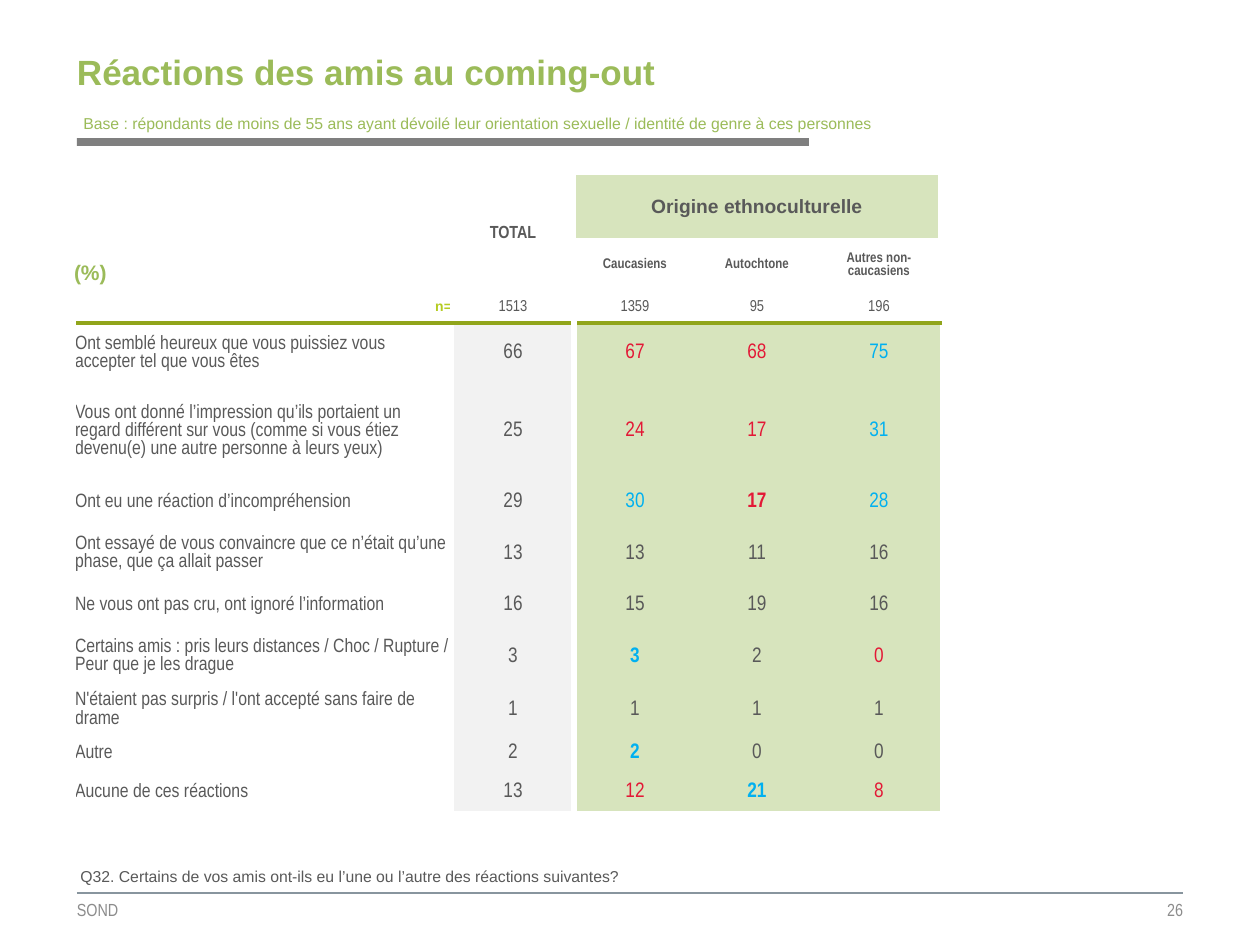
from lxml import etree
from pptx import Presentation
from pptx import util as u
from pptx.dml.color import RGBColor
from pptx.enum import shapes, text
from pptx.oxml.ns import qn

PX = u.Inches(1) / 126
GREEN, GREY, MUTED = "9BBB59", "595959", "8C8C8C"
RED, BLUE, LIME, OLIVE = "E31836", "00B0F0", "B5CC22", "91A51B"
PALE_GREEN, PALE_GREY, WHITE = "D7E4BD", "F2F2F2", "FFFFFF"
NARROW = "Arial Narrow"
LEFT, CENTER, RIGHT = text.PP_ALIGN.LEFT, text.PP_ALIGN.CENTER, text.PP_ALIGN.RIGHT
MIDDLE, BOTTOM = text.MSO_ANCHOR.MIDDLE, text.MSO_ANCHOR.BOTTOM

HEADER_HEIGHTS = [38, 22, 53, 32]
COLUMN_WIDTHS = [378, 122, 122, 122, 122]
ORIGINS = ["Caucasiens", "Autochtone", "Autres non-caucasiens"]
SAMPLE_SIZES = ["1513", "1359", "95", "196"]
# A leading r or b marks a red or blue score; a capital also makes it bold.
MARKS = {"r": (RED, False), "R": (RED, True), "b": (BLUE, False), "B": (BLUE, True)}
REACTIONS = [
    (59, "Ont semblé heureux que vous puissiez vous accepter tel que vous êtes",
     "66 r67 r68 b75"),
    (98, "Vous ont donné l’impression qu’ils portaient un regard différent sur vous "
         "(comme si vous étiez devenu(e) une autre personne à leurs yeux)",
     "25 r24 r17 b31"),
    (44, "Ont eu une réaction d’incompréhension", "29 b30 R17 b28"),
    (59, "Ont essayé de vous convaincre que ce n’était qu’une phase, que ça allait passer",
     "13 13 11 16"),
    (44, "Ne vous ont pas cru, ont ignoré l’information", "16 15 19 16"),
    (59, "Certains amis : pris leurs distances / Choc / Rupture / Peur que je les drague",
     "3 B3 2 r0"),
    (44, "N'étaient pas surpris / l'ont accepté sans faire de drame", "1 1 1 1"),
    (39, "Autre", "2 B2 0 0"),
    (39, "Aucune de ces réactions", "13 r12 B21 r8"),
]


def px(length):
    return u.Emu(round(length * PX))


def rgb(color):
    return RGBColor.from_string(color)


class SlideBuilder:
    """Holds the current slide and its text style."""

    def __init__(self, slide):
        self.slide = slide

    def add_text(self, frame, words, size, color, font="Arial", bold=False, align=LEFT):
        paragraph = frame.paragraphs[0]
        paragraph.alignment = align
        run = paragraph.add_run()
        run.text = words
        run.font.size, run.font.name, run.font.bold = u.Pt(size), font, bold
        run.font.color.rgb = rgb(color)
        return paragraph

    def inset(self, holder, left, top, right, bottom):
        holder.margin_left, holder.margin_top = px(left), px(top)
        holder.margin_right, holder.margin_bottom = px(right), px(bottom)

    def title(self, box, words):
        title = self.slide.shapes.title
        title.left, title.top, title.width, title.height = map(px, box)
        frame = title.text_frame
        frame.auto_size = text.MSO_AUTO_SIZE.NONE
        frame.vertical_anchor = MIDDLE
        self.inset(frame, 0, 0, 0, 34)
        self.add_text(frame, words, 20, GREEN, bold=True)

    def note(self, box, words, color, wrap=True):
        frame = self.slide.shapes.add_textbox(*map(px, box)).text_frame
        frame.word_wrap = wrap
        frame.auto_size = text.MSO_AUTO_SIZE.SHAPE_TO_FIT_TEXT
        self.add_text(frame, words, 9, color)

    def footer(self, box, words, align):
        frame = self.slide.shapes.add_textbox(*map(px, box)).text_frame
        frame.word_wrap = True
        frame.vertical_anchor = MIDDLE
        self.inset(frame, 0, 0, 0, 0)
        self.add_text(frame, words, 10, MUTED, NARROW, align=align)

    def bar(self, box, color):
        bar = self.slide.shapes.add_shape(shapes.MSO_SHAPE.RECTANGLE, *map(px, box))
        bar.shadow.inherit = False
        bar.fill.solid()
        bar.fill.fore_color.rgb = rgb(color)
        bar.line.fill.background()

    def rule(self, start, end, color, weight):
        rule = self.slide.shapes.add_connector(
            shapes.MSO_CONNECTOR.STRAIGHT, *map(px, start + end))
        rule.line.color.rgb = rgb(color)
        rule.line.width = u.Pt(weight)
        etree.SubElement(rule.element.spPr, qn("a:effectLst"))

    def table(self, left, top, widths, heights):
        table = self.slide.shapes.add_table(
            len(heights), len(widths), px(left), px(top),
            px(sum(widths)), px(sum(heights))).table
        table.first_row = table.horz_banding = False
        for column, width in zip(table.columns, widths):
            column.width = px(width)
        for row, height in zip(table.rows, heights):
            row.height = px(height)
        for cell in table.iter_cells():
            cell.fill.background()
            cell.vertical_anchor = MIDDLE
            self.inset(cell, 1, 1, 1, 0)
        return table

    def shade(self, cell, color):
        cell.fill.solid()
        cell.fill.fore_color.rgb = rgb(color)

    def borders(self, cell, edges):
        """Draws the edges given as side: (color, points) and clears the others."""
        properties = cell._tc.get_or_add_tcPr()
        for position, side in enumerate("LRTB"):
            line = etree.Element(qn(f"a:ln{side}"))
            properties.insert(position, line)
            if side in edges:
                color, weight = edges[side]
                line.set("w", str(u.Pt(weight)))
                fill = etree.SubElement(line, qn("a:solidFill"))
                etree.SubElement(fill, qn("a:srgbClr")).set("val", color)
            else:
                etree.SubElement(line, qn("a:noFill"))

    def cell(self, cell, words, size, color=GREY, font=NARROW, bold=False, align=CENTER):
        return self.add_text(cell.text_frame, words, size, color, font, bold, align)


def fill_header(page, table):
    table.cell(0, 1).merge(table.cell(2, 1))
    table.cell(0, 2).merge(table.cell(1, 4))
    table.cell(1, 0).merge(table.cell(2, 0))
    page.cell(table.cell(0, 1), "TOTAL", 10, bold=True)
    page.shade(table.cell(0, 2), PALE_GREEN)
    page.cell(table.cell(0, 2), "Origine ethnoculturelle", 11, font="Arial", bold=True)

    unit, sample = table.cell(1, 0), table.cell(3, 0)
    unit.vertical_anchor = BOTTOM
    for corner in (unit, sample):
        page.inset(corner, 0, 6, 0, 6)
    page.cell(unit, "(%)", 12, GREEN, "Arial", True, LEFT).line_spacing = 0.95
    page.cell(sample, "n=", 8, LIME, "Arial", True, RIGHT).line_spacing = 0.95

    for column, origin in enumerate(ORIGINS, 2):
        page.cell(table.cell(2, column), origin, 8, bold=True)
    for column, size in enumerate(SAMPLE_SIZES, 1):
        page.cell(table.cell(3, column), size, 9)


def fill_scores(page, table, first):
    for row, (_, reaction, scores) in enumerate(REACTIONS, first):
        page.cell(table.cell(row, 0), reaction, 11, align=LEFT)
        for column, score in enumerate(scores.split(), 1):
            color, bold = MARKS.get(score[0], (GREY, False))
            cell = table.cell(row, column)
            page.shade(cell, PALE_GREY if column == 1 else PALE_GREEN)
            page.cell(cell, score.lstrip("rRbB"), 12, color, bold=bold)


def draw_borders(page, table, first):
    for row in range(len(table.rows)):
        for column in range(len(table.columns)):
            in_header = row < first
            gap = (WHITE, 3 if in_header else 4.5)
            edges = {}
            if in_header or column < 2:
                edges = {"L": (WHITE, 3), "R": (WHITE, 3)}
            if column == 1:
                edges["R"] = gap
            if column == 2:
                edges["L"] = gap
            if in_header and column == 0:
                del edges["L"]
            if row == first - 1:
                edges["B"] = (OLIVE, 3)
            if row == first:
                edges["T"] = (OLIVE, 3)
            page.borders(table.cell(row, column), edges)


def main():
    deck = Presentation()
    deck.slide_width, deck.slide_height = px(1260), px(945)
    page = SlideBuilder(deck.slides.add_slide(deck.slide_layouts[5]))

    page.rule((77, 893), (1183, 893), "88959E", 1.5)
    page.bar((77, 138, 732, 8), "7F7F7F")
    page.footer((77, 893, 353, 33), "SOND", LEFT)
    page.footer((825, 893, 358, 33), "26", RIGHT)

    first = len(HEADER_HEIGHTS)
    heights = HEADER_HEIGHTS + [height for height, _, _ in REACTIONS]
    table = page.table(74, 175, COLUMN_WIDTHS, heights)
    fill_header(page, table)
    fill_scores(page, table, first)
    draw_borders(page, table, first)

    page.title((77, 45, 781, 87), "Réactions des amis au coming-out")
    page.note((71, 108, 822, 32), "Base : répondants de moins de 55 ans ayant dévoilé leur "
              "orientation sexuelle / identité de genre à ces personnes", GREEN, wrap=False)
    page.note((68, 861, 1137, 32), "Q32. Certains de vos amis ont-ils eu l’une ou l’autre "
              "des réactions suivantes?", GREY)
    deck.save("out.pptx")


if __name__ == "__main__":
    main()
